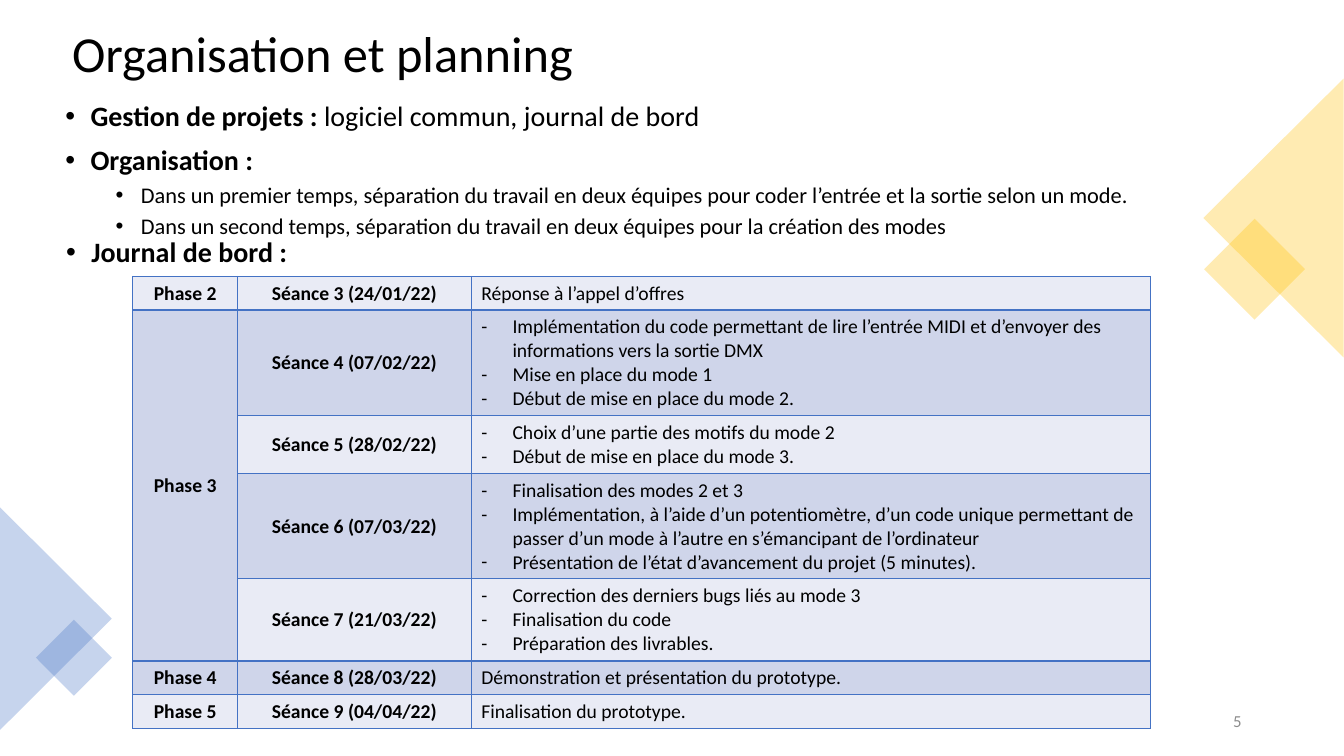
from lxml import etree
from pptx import Presentation
from pptx.dml.color import RGBColor
from pptx.enum.shapes import MSO_SHAPE
from pptx.enum.text import MSO_ANCHOR, PP_ALIGN
from pptx.oxml.ns import qn
from pptx.util import Inches, Pt

WIDTH, HEIGHT = Inches(13.333), Inches(7.5)
COLUMN, ROW = WIDTH / 16, HEIGHT / 9
TOP, MIDDLE = MSO_ANCHOR.TOP, MSO_ANCHOR.MIDDLE
LEFT, CENTER, RIGHT = PP_ALIGN.LEFT, PP_ALIGN.CENTER, PP_ALIGN.RIGHT
SQUARE, TRIANGLE = MSO_SHAPE.RECTANGLE, MSO_SHAPE.ISOSCELES_TRIANGLE

FONT = "Calibri"
BLACK = RGBColor(0x00, 0x00, 0x00)
GREY = RGBColor(0x8C, 0x8C, 0x8C)
GOLD = RGBColor(0xFF, 0xC0, 0x00)
BLUE = RGBColor(0x44, 0x72, 0xC4)
BANDS = [RGBColor(0xE9, 0xEB, 0xF5), RGBColor(0xCF, 0xD5, 0xEA)]

TITLE = {"size": Pt(36), "color": BLACK}
HEADING = {"size": Pt(20), "color": BLACK, "bold": True}
PLAIN_HEADING = {**HEADING, "bold": False}
DETAIL = {"size": Pt(16), "color": BLACK}
CELL = {"size": Pt(14), "color": BLACK}
CELL_BOLD = {**CELL, "bold": True}
PAGE_NUMBER = {"size": Pt(12), "color": GREY}

SPACED = {"line_spacing": 0.9, "space_before": Pt(10)}
SPACED_DETAIL = {"line_spacing": 0.9, "space_before": Pt(5), "level": 1}

DECORATIONS = [
    (SQUARE, (14.51, 2.78, 0.85, 0.85), 45, GOLD),
    (TRIANGLE, (13.5, 1.76, 3.32, 1.67), 270, GOLD),
    (TRIANGLE, (-0.66, 6.7, 2.65, 1.33), 90, BLUE),
    (SQUARE, (0.56, 7.51, 0.64, 0.64), 45, BLUE),
]
DETAILS = [
    "Dans un premier temps, séparation du travail en deux équipes pour coder l’entrée et la sortie selon un mode.",
    "Dans un second temps, séparation du travail en deux équipes pour la création des modes",
]
SESSIONS = [
    ("Phase 2", "Séance 3 (24/01/22)", ["Réponse à l’appel d’offres"]),
    ("Phase 3", "Séance 4 (07/02/22)", [
        "Implémentation du code permettant de lire l’entrée MIDI et d’envoyer des informations vers la sortie DMX",
        "Mise en place du mode 1",
        "Début de mise en place du mode 2."]),
    ("", "Séance 5 (28/02/22)", [
        "Choix d’une partie des motifs du mode 2",
        "Début de mise en place du mode 3."]),
    ("", "Séance 6 (07/03/22)", [
        "Finalisation des modes 2 et 3",
        "Implémentation, à l’aide d’un potentiomètre, d’un code unique permettant de passer d’un mode à l’autre "
        "en s’émancipant de l’ordinateur",
        "Présentation de l’état d’avancement du projet (5 minutes)."]),
    ("", "Séance 7 (21/03/22)", [
        "Correction des derniers bugs liés au mode 3",
        "Finalisation du code",
        "Préparation des livrables."]),
    ("Phase 4", "Séance 8 (28/03/22)", ["Démonstration et présentation du prototype."]),
    ("Phase 5", "Séance 9 (04/04/22)", ["Finalisation du prototype."]),
]
COLUMN_WIDTHS = [1.25, 2.78, 8.09]
ROW_HEIGHTS = [0.4, 1.26, 0.69, 1.25, 0.98, 0.4, 0.4]


def place(left, top, width, height):
    return int(left * COLUMN), int(top * ROW), int(width * COLUMN), int(height * ROW)


def add_span(para, text, style):
    span = para.add_run()
    span.text = text
    span.font.name = FONT
    for name, value in style.items():
        if name == "color":
            span.font.color.rgb = value
        else:
            setattr(span.font, name, value)


def add_bullet(para, mark, margin, hanging):
    properties = para._p.get_or_add_pPr()
    properties.set("marL", str(Inches(margin)))
    properties.set("indent", str(-Inches(hanging)))
    font = etree.SubElement(properties, qn("a:buFont"))
    font.set("typeface", "Arial" if mark == "•" else FONT)
    etree.SubElement(properties, qn("a:buChar")).set("char", mark)


def write(frame, paragraphs):
    for index, (spans, layout, bullet) in enumerate(paragraphs):
        para = frame.add_paragraph() if index else frame.paragraphs[0]
        for name, value in layout.items():
            setattr(para, name, value)
        if bullet:
            add_bullet(para, *bullet)
        for text, style in spans:
            add_span(para, text, style)


def add_text(page, area, paragraphs, anchor=TOP):
    frame = page.shapes.add_textbox(*place(*area)).text_frame
    frame.word_wrap = True
    frame.vertical_anchor = anchor
    write(frame, paragraphs)


def add_decoration(page, kind, area, rotation, color):
    shape = page.shapes.add_shape(kind, *place(*area))
    shape.rotation = rotation
    shape.shadow.inherit = False
    shape.fill.solid()
    shape.fill.fore_color.rgb = color
    shape.line.fill.background()
    tint = shape.fill._xPr.find(qn("a:solidFill"))[0]
    etree.SubElement(tint, qn("a:alpha")).set("val", "30000")


def add_borders(cell):
    properties = cell._tc.get_or_add_tcPr()
    for index, side in enumerate(["lnL", "lnR", "lnT", "lnB"]):
        line = etree.Element(qn("a:" + side), w=str(Pt(1)))
        fill = etree.SubElement(line, qn("a:solidFill"))
        etree.SubElement(fill, qn("a:srgbClr")).set("val", str(BLUE))
        properties.insert(index, line)


def fill_cell(cell, color, paragraphs):
    cell.vertical_anchor = MIDDLE
    cell.fill.solid()
    cell.fill.fore_color.rgb = color
    add_borders(cell)
    write(cell.text_frame, paragraphs)


def add_journal(page):
    area = place(1.58, 3.29, sum(COLUMN_WIDTHS), sum(ROW_HEIGHTS))
    table = page.shapes.add_table(len(SESSIONS), len(COLUMN_WIDTHS), *area).table
    table.first_row = False
    for column, width in zip(table.columns, COLUMN_WIDTHS):
        column.width = int(width * COLUMN)
    for index, (phase, session, tasks) in enumerate(SESSIONS):
        table.rows[index].height = int(ROW_HEIGHTS[index] * ROW)
        bullet = ("-", 0.31, 0.31) if len(tasks) > 1 else None
        labels = [[([(text, CELL_BOLD)], {"alignment": CENTER}, None)] if text else []
                  for text in (phase, session)]
        details = [([(task, CELL)], {"alignment": LEFT}, bullet) for task in tasks]
        for cell, paragraphs in zip(table.rows[index].cells, [*labels, details]):
            fill_cell(cell, BANDS[index % 2], paragraphs)
    table.cell(1, 0).merge(table.cell(4, 0))


def main():
    deck = Presentation()
    deck.slide_width, deck.slide_height = WIDTH, HEIGHT
    page = deck.slides.add_slide(deck.slide_layouts[6])
    add_text(page, (0.74, -0.07, 14.32, 1.49),
             [([("Organisation et planning", TITLE)], {"line_spacing": 0.9}, None)], MIDDLE)
    for decoration in DECORATIONS:
        add_decoration(page, *decoration)
    main_bullet, detail_bullet = ("•", 0.25, 0.25), ("•", 0.75, 0.25)
    project = [("Gestion de projets : ", HEADING), ("logiciel commun, journal de bord", PLAIN_HEADING)]
    add_text(page, (0.66, 1.16, 14.32, 5.77), [
        (project, SPACED, main_bullet),
        ([("Organisation :", HEADING)], SPACED, main_bullet),
        *[([(text, DETAIL)], SPACED_DETAIL, detail_bullet) for text in DETAILS],
    ])
    add_journal(page)
    add_text(page, (0.67, 2.78, 14.32, 5.77),
             [([("Journal de bord :", HEADING)], SPACED, main_bullet)])
    add_text(page, (11.3, 8.34, 3.6, 0.48),
             [([("5", PAGE_NUMBER)], {"alignment": RIGHT}, None)], MIDDLE)
    deck.save("out.pptx")


if __name__ == "__main__":
    main()
